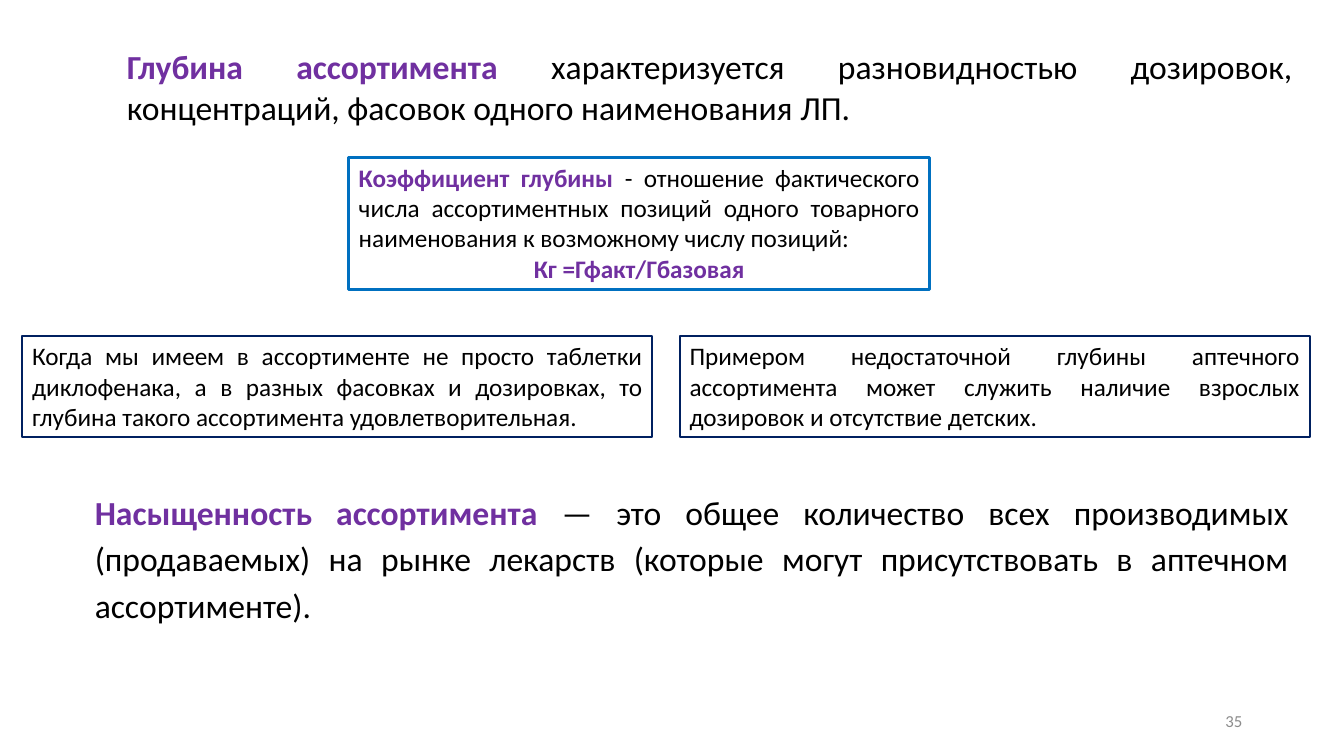
from pptx import Presentation, util as u
from pptx.dml.color import RGBColor
from pptx.enum import shapes, text

W, H = 13.33, 7.5
FONT = "Calibri"
COLORS = {"term": "7030A0", "body": "000000", "number": "8C8C8C",
          "formula_box": "0070C0", "example_box": "002060"}
ALIGN = {"j": text.PP_ALIGN.JUSTIFY, "c": text.PP_ALIGN.CENTER, "r": text.PP_ALIGN.RIGHT}

DEPTH = [("j", [("Глубина ассортимента ", "term"),
                ("характеризуется разновидностью дозировок, концентраций, "
                 "фасовок одного наименования ЛП.", "body")])]
COEFFICIENT = [("j", [("Коэффициент глубины ", "term"),
                      ("- отношение фактического числа ассортиментных позиций одного "
                       "товарного наименования к возможному числу позиций:", "body")]),
               ("c", [("Кг =Гфакт/Гбазовая", "term")])]
EXAMPLES = [
    "Когда мы имеем в ассортименте не просто таблетки диклофенака, а в разных "
    "фасовках и дозировках, то глубина такого ассортимента удовлетворительная.",
    "Примером недостаточной глубины аптечного ассортимента может служить наличие "
    "взрослых дозировок и отсутствие детских.",
]
SATURATION = [("j", [("Насыщенность ассортимента ", "term"),
                     ("— это общее количество всех производимых (продаваемых) на рынке лекарств "
                      "(которые могут присутствовать в аптечном ассортименте).", "body")])]
NUMBER = [("r", [("35", "number")])]

EXAMPLE_LEFT, EXAMPLE_TOP = 0.22, 3.33
EXAMPLE_W, EXAMPLE_H, EXAMPLE_GAP = 6.25, 1.01, 0.27


def rgb(name):
    return RGBColor.from_string(COLORS[name])


def add_block(s, at, paragraphs, size, border=None, width=0):
    box = [u.Inches(v) for v in at]
    if border:
        sp = s.shapes.add_shape(shapes.MSO_SHAPE.RECTANGLE, *box)
        sp.shadow.inherit = False
        sp.fill.background()
        sp.line.color.rgb = rgb(border)
        sp.line.width = u.Pt(width)
    else:
        sp = s.shapes.add_textbox(*box)
    tf = sp.text_frame
    tf.word_wrap = True
    tf.vertical_anchor = text.MSO_ANCHOR.TOP
    for i, (align, runs) in enumerate(paragraphs):
        p = tf.add_paragraph() if i else tf.paragraphs[0]
        p.alignment = ALIGN[align]
        p.font.name = FONT
        p.font.size = u.Pt(size)
        for words, color in runs:
            r = p.add_run()
            r.text = words
            r.font.bold = color == "term"
            r.font.color.rgb = rgb(color)
    return tf


prs = Presentation()
prs.slide_width, prs.slide_height = u.Inches(W), u.Inches(H)
s = prs.slides.add_slide(prs.slide_layouts[6])

tf = add_block(s, (9.42, 6.95, 3, 0.4), NUMBER, 12)
tf.vertical_anchor = text.MSO_ANCHOR.MIDDLE
add_block(s, (1.16, 0.41, 11.76, 0.91), DEPTH, 24)
add_block(s, (3.46, 1.56, 5.76, 1.31), COEFFICIENT, 18, "formula_box", 2.25)

for col, words in enumerate(EXAMPLES):
    left = EXAMPLE_LEFT + col * (EXAMPLE_W + EXAMPLE_GAP)
    add_block(s, (left, EXAMPLE_TOP, EXAMPLE_W, EXAMPLE_H),
              [("j", [(words, "body")])], 18, "example_box", 1.5)

tf = add_block(s, (0.59, 4.77, 12.29, 2.04), SATURATION, 24)
tf.margin_left = u.Inches(0.35)
tf.paragraphs[0].line_spacing = 1.15

prs.save("out.pptx")
